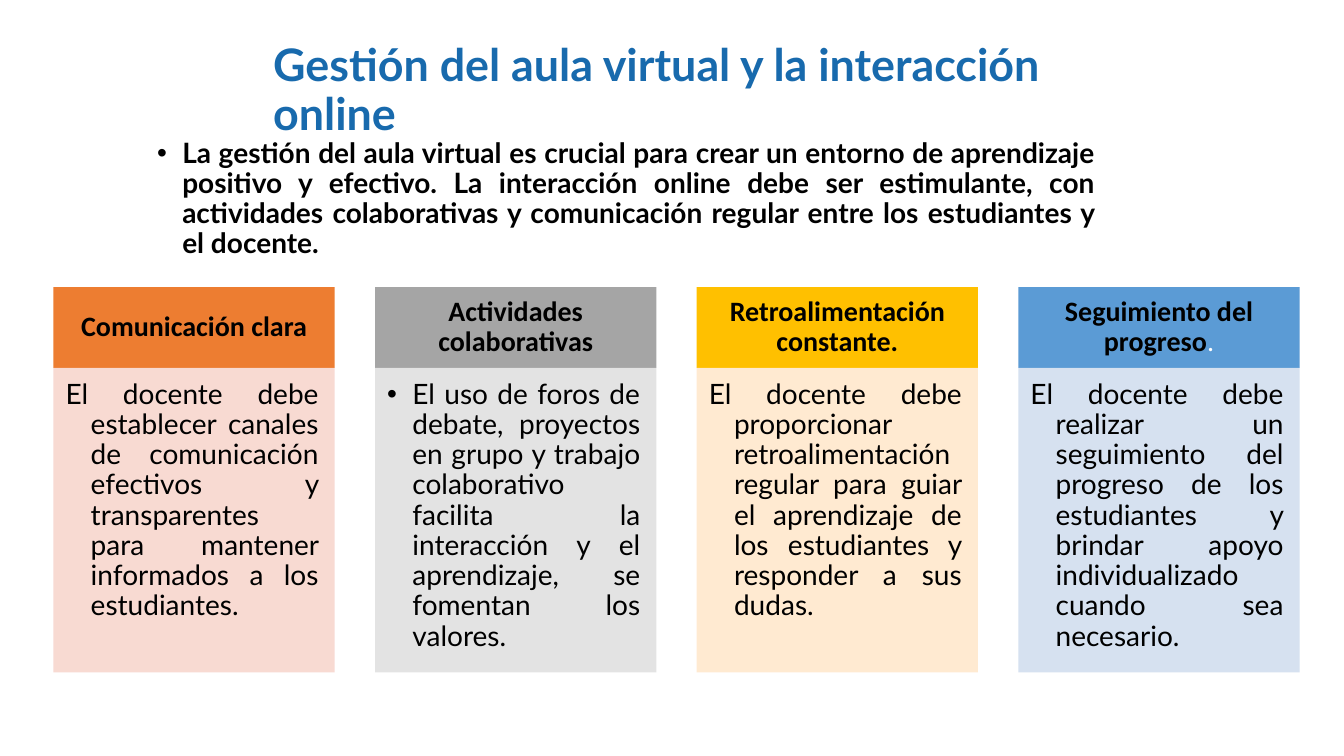
from lxml import etree
from pptx import Presentation
from pptx.dml.color import RGBColor
from pptx.enum.shapes import MSO_SHAPE
from pptx.enum.text import MSO_ANCHOR, MSO_AUTO_SIZE, PP_ALIGN
from pptx.oxml.ns import qn
from pptx.util import Inches, Pt

RECTANGLE = MSO_SHAPE.RECTANGLE
TOP, MIDDLE, BOTTOM = MSO_ANCHOR.TOP, MSO_ANCHOR.MIDDLE, MSO_ANCHOR.BOTTOM
LEFT, CENTER, JUSTIFY = PP_ALIGN.LEFT, PP_ALIGN.CENTER, PP_ALIGN.JUSTIFY
NO_AUTOFIT = MSO_AUTO_SIZE.NONE

BLACK, WHITE, TITLE_BLUE = "000000", "FFFFFF", "186AAD"
TITLE_FONT, HEADER_FONT = "Lato", "Calibri"
TEXT_SIZE, TITLE_SIZE = 20, 32
LINE_SPACING = 0.9
HANGING_INDENT = 0.25

CARD_LEFT, CARD_STEP, CARD_WIDTH = 0.53, 3.19, 2.79
HEADER_TOP, HEADER_HEIGHT, BODY_HEIGHT = 2.85, 0.8, 3.02
HEADER_MARGINS = (0.16, 0.09, 0.16, 0.09)
BODY_MARGINS = (0.12, 0.12, 0.16, 0.17)
DEFAULT_MARGINS = (0.1, 0.05, 0.1, 0.05)
TITLE_MARGINS = (0.1, 0.05, 0.15, 0.05)

TITLE = "Gestión del aula virtual y la interacción online"
INTRODUCTION = (
    "La gestión del aula virtual es crucial para crear un entorno de aprendizaje "
    "positivo y efectivo. La interacción online debe ser estimulante, con actividades "
    "colaborativas y comunicación regular entre los estudiantes y el docente."
)
CARDS = [
    ("ED7D31", "F8D7CE", [("Comunicación clara", BLACK, True)], False,
     "El docente debe establecer canales de comunicación efectivos y transparentes "
     "para mantener informados a los estudiantes."),
    ("A5A5A5", "E1E1E1", [("Actividades colaborativas", BLACK, True)], True,
     "El uso de foros de debate, proyectos en grupo y trabajo colaborativo facilita "
     "la interacción y el aprendizaje, se fomentan los valores."),
    ("FFC000", "FFE8CC", [("Retroalimentación constante.", BLACK, True)], False,
     "El docente debe proporcionar retroalimentación regular para guiar el "
     "aprendizaje de los estudiantes y responder a sus dudas."),
    ("5B9BD5", "D2DEEF",
     [("Seguimiento del progreso", BLACK, True), (".", WHITE, False)], False,
     "El docente debe realizar un seguimiento del progreso de los estudiantes y "
     "brindar apoyo individualizado cuando sea necesario."),
]


def color(hex_value):
    """Turn a hex string into a colour."""
    return RGBColor.from_string(hex_value)


class SlideBuilder:
    """Hold the current slide and its text style."""

    def __init__(self, slide):
        """Keep the slide that is being built."""
        self.slide = slide

    def add_text(self, shape, runs, font_name=TITLE_FONT, size=TEXT_SIZE,
                 alignment=JUSTIFY, anchor=TOP, margins=DEFAULT_MARGINS):
        """Add one paragraph, run by run, and return it."""
        frame = shape.text_frame
        frame.word_wrap = True
        frame.auto_size = NO_AUTOFIT
        frame.vertical_anchor = anchor
        (frame.margin_left, frame.margin_top,
         frame.margin_right, frame.margin_bottom) = map(Inches, margins)
        paragraph = frame.paragraphs[0]
        paragraph.alignment = alignment
        paragraph.line_spacing = LINE_SPACING
        paragraph.space_before = Pt(0)
        for text, text_color, bold in runs:
            run = paragraph.add_run()
            run.text = text
            run.font.name = font_name
            run.font.size = Pt(size)
            run.font.bold = bold
            run.font.color.rgb = color(text_color)
        return paragraph

    def hang(self, paragraph, bulleted):
        """Give a paragraph a hanging indent and, if asked, a bullet."""
        properties = paragraph._p.get_or_add_pPr()
        properties.set("marL", str(Inches(HANGING_INDENT)))
        properties.set("indent", str(-Inches(HANGING_INDENT)))
        if bulleted:
            font = etree.SubElement(properties, qn("a:buFont"))
            font.set("typeface", "Arial")
            bullet = etree.SubElement(properties, qn("a:buChar"))
            bullet.set("char", "•")
        else:
            etree.SubElement(properties, qn("a:buNone"))

    def title(self, text, left, top, width, height):
        """Place and fill the title placeholder."""
        shape = self.slide.shapes.title
        shape.left, shape.top = Inches(left), Inches(top)
        shape.width, shape.height = Inches(width), Inches(height)
        self.add_text(shape, [(text, TITLE_BLUE, True)], size=TITLE_SIZE,
                      alignment=LEFT, anchor=BOTTOM, margins=TITLE_MARGINS)

    def introduction(self, text, left, top, width, height):
        """Add the bulleted introduction."""
        shape = self.slide.shapes.add_textbox(
            Inches(left), Inches(top), Inches(width), Inches(height))
        self.hang(self.add_text(shape, [(text, BLACK, True)]), True)

    def panel(self, left, top, height, fill, opacity=100):
        """Add a filled rectangle without outline."""
        shape = self.slide.shapes.add_shape(
            RECTANGLE, Inches(left), Inches(top), Inches(CARD_WIDTH), Inches(height))
        shape.shadow.inherit = False
        shape.line.fill.background()
        shape.fill.solid()
        shape.fill.fore_color.rgb = color(fill)
        if opacity < 100:
            fill_color = shape._element.spPr.find(qn("a:solidFill"))[0]
            alpha = etree.SubElement(fill_color, qn("a:alpha"))
            alpha.set("val", str(opacity * 1000))
        return shape

    def card(self, left, header_fill, body_fill, heading, bulleted, text):
        """Add a heading panel with its description below."""
        header = self.panel(left, HEADER_TOP, HEADER_HEIGHT, header_fill)
        self.add_text(header, heading, HEADER_FONT, alignment=CENTER,
                      anchor=MIDDLE, margins=HEADER_MARGINS)
        body = self.panel(left, HEADER_TOP + HEADER_HEIGHT, BODY_HEIGHT, body_fill, 90)
        paragraph = self.add_text(body, [(text, BLACK, False)], margins=BODY_MARGINS)
        self.hang(paragraph, bulleted)


def main():
    """Build the slide and save the presentation."""
    presentation = Presentation()
    presentation.slide_width = Inches(13.33)
    presentation.slide_height = Inches(7.5)
    slide = presentation.slides.add_slide(presentation.slide_layouts[5])
    builder = SlideBuilder(slide)
    builder.title(TITLE, 2.61, 0.35, 9.11, 1.09)
    builder.introduction(INTRODUCTION, 1.46, 1.33, 9.5, 1.21)
    for index, card in enumerate(CARDS):
        builder.card(CARD_LEFT + index * CARD_STEP, *card)
    presentation.save("out.pptx")


if __name__ == "__main__":
    main()
